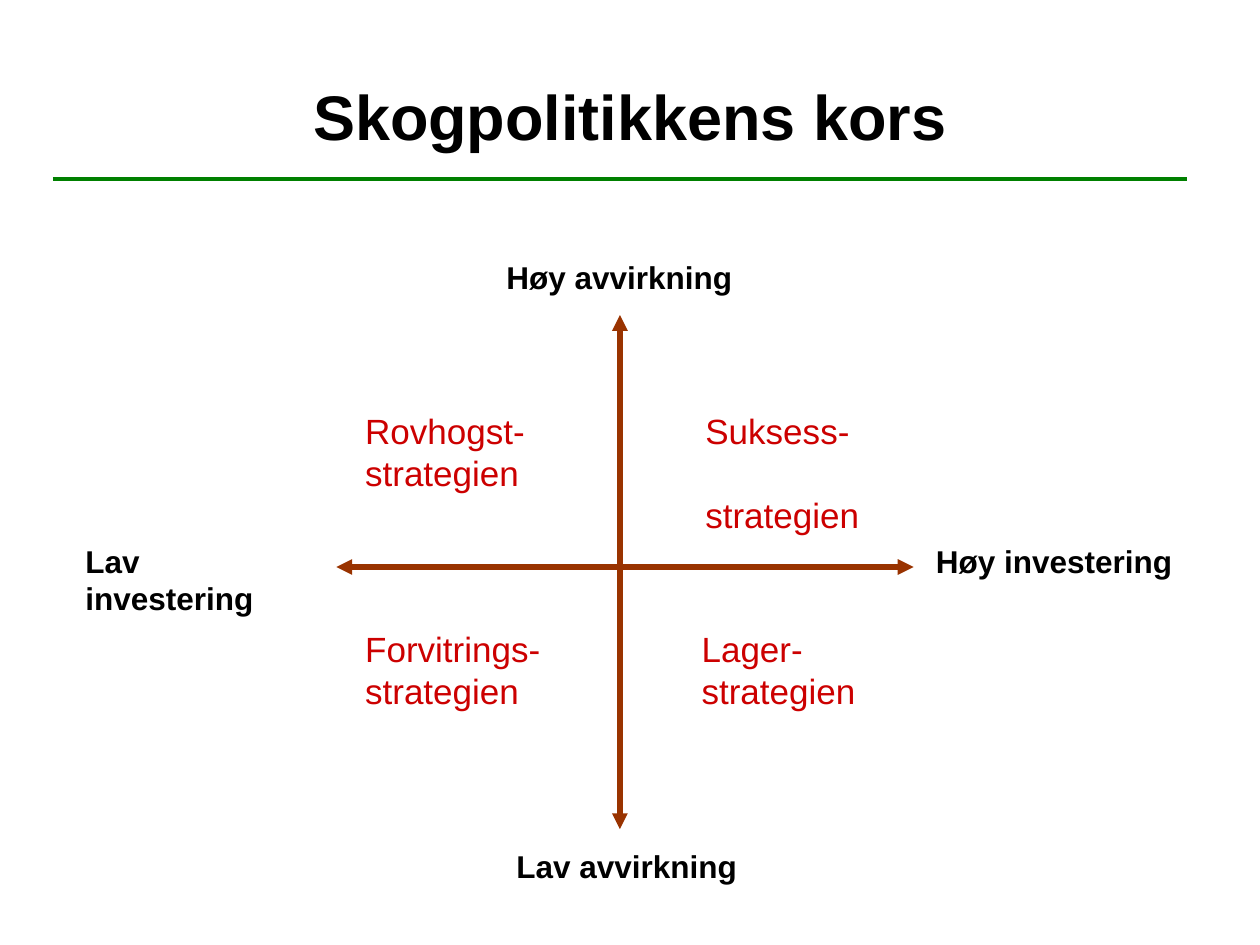
from dataclasses import dataclass

import lxml.etree
import pptx
import pptx.dml.color
import pptx.enum.shapes
import pptx.enum.text
import pptx.oxml.ns
import pptx.util

EMU_PER_PX = 9144  # 100 px to the inch


@dataclass(frozen=True)
class Theme:
    font: str = "Arial"
    ink: str = "000000"
    rule: str = "008000"
    axis: str = "993300"
    strategy: str = "CC0000"
    title_size: int = 36
    label_size: int = 18
    strategy_size: int = 20
    rule_width: float = 2.25
    axis_width: float = 3


THEME = Theme()


@dataclass(frozen=True)
class Box:
    left: int
    top: int
    width: int
    height: int

    def inner(self, left, top, width, height):
        """Box placed relative to this one's top left corner."""
        return Box(self.left + left, self.top + top, width, height)


def emu(px):
    return pptx.util.Emu(px * EMU_PER_PX)


def color(code):
    return pptx.dml.color.RGBColor.from_string(code)


def add_text(page, box, lines, size, code, bold=False, wrap=True, gap=0):
    """Add one paragraph per line, with gap points between paragraphs."""
    shape = page.shapes.add_textbox(
        emu(box.left), emu(box.top), emu(box.width), emu(box.height))
    frame = shape.text_frame
    frame.word_wrap = wrap
    for index, line in enumerate(lines):
        para = frame.add_paragraph() if index else frame.paragraphs[0]
        if index:
            para.space_before = pptx.util.Pt(gap)
        span = para.add_run()
        span.text = line
        span.font.name = THEME.font
        span.font.size = pptx.util.Pt(size)
        span.font.bold = bold
        span.font.color.rgb = color(code)
    return frame


def add_line(page, start, end, code, width, arrows=False):
    line = page.shapes.add_connector(
        pptx.enum.shapes.MSO_CONNECTOR.STRAIGHT,
        emu(start[0]), emu(start[1]), emu(end[0]), emu(end[1]))
    line.line.color.rgb = color(code)
    line.line.width = pptx.util.Pt(width)
    qn = pptx.oxml.ns.qn
    if arrows:
        outline = line.line._get_or_add_ln()
        for tag in ("a:headEnd", "a:tailEnd"):
            lxml.etree.SubElement(outline, qn(tag), type="triangle")
    lxml.etree.SubElement(line._element.spPr, qn("a:effectLst"))


def add_heading(page, box):
    title = box.inner(33, 0, 850, 83)
    frame = add_text(page, title, ["Skogpolitikkens kors"],
                     THEME.title_size, THEME.ink, bold=True)
    frame.vertical_anchor = pptx.enum.text.MSO_ANCHOR.MIDDLE
    frame.paragraphs[0].alignment = pptx.enum.text.PP_ALIGN.CENTER
    bottom = box.top + box.height
    add_line(page, (box.left, bottom), (box.left + box.width, bottom),
             THEME.rule, THEME.rule_width)


def add_axes(page, box):
    """Draw a cross whose arms reach the edges of the box."""
    center_x, center_y = box.left + 225, box.top + 200
    add_line(page, (center_x, box.top + box.height), (center_x, box.top),
             THEME.axis, THEME.axis_width, arrows=True)
    add_line(page, (box.left, center_y), (box.left + box.width, center_y),
             THEME.axis, THEME.axis_width, arrows=True)


def add_strategy_cross(page, box):
    add_axes(page, box.inner(209, 50, 458, 408))

    axis_labels = [
        ("Høy avvirkning", 334, 0, 199, True),
        ("Lav avvirkning", 342, 467, 195, False),
        ("Lav investering", 0, 225, 203, False),
        ("Høy investering", 675, 225, 208, False),
    ]
    for label, left, top, width, wrap in axis_labels:
        add_text(page, box.inner(left, top, width, 40), [label],
                 THEME.label_size, THEME.ink, bold=True, wrap=wrap)

    upper, lower = 120, 293
    strategies = [
        (["Rovhogst- strategien"], 222, upper, 157),
        (["Suksess-", "strategien"], 492, upper, 143),
        (["Forvitrings-strategien"], 222, lower, 166),
        (["Lager-strategien"], 489, lower, 150),
    ]
    for lines, left, top, width in strategies:
        add_text(page, box.inner(left, top, width, 77), lines,
                 THEME.strategy_size, THEME.strategy, gap=24)


def main():
    deck = pptx.Presentation()
    deck.slide_width, deck.slide_height = emu(1000), emu(750)
    page = deck.slides.add_slide(deck.slide_layouts[6])
    add_heading(page, Box(42, 50, 900, 92))
    add_strategy_cross(page, Box(58, 200, 883, 507))
    deck.save("out.pptx")


if __name__ == "__main__":
    main()
